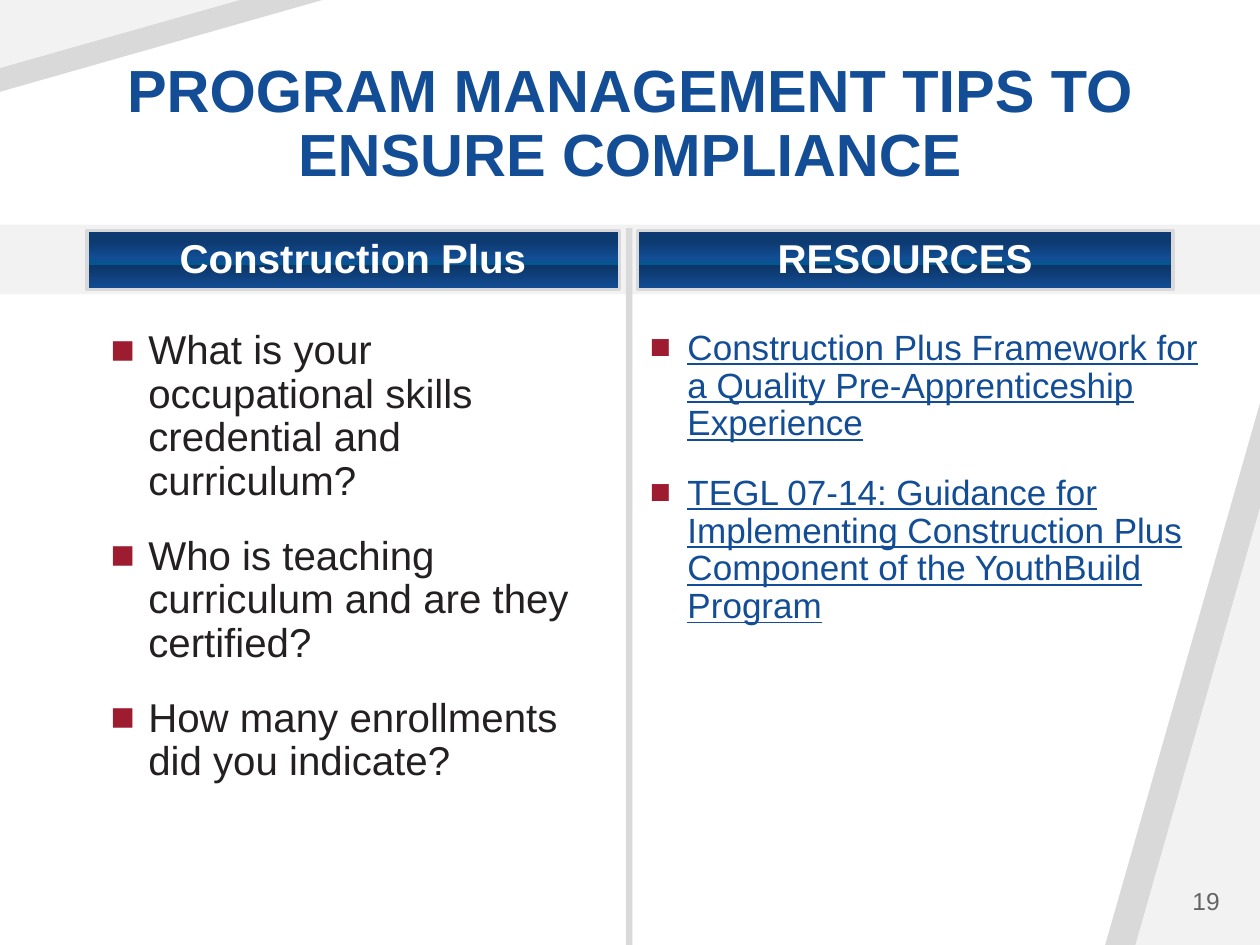
import dataclasses

import lxml.etree
import pptx
import pptx.dml.color
import pptx.enum.shapes
import pptx.enum.text
import pptx.oxml.ns
import pptx.util

Cm = pptx.util.Cm
Align = pptx.enum.text.PP_ALIGN
Anchor = pptx.enum.text.MSO_ANCHOR
Shape = pptx.enum.shapes.MSO_SHAPE
qn = pptx.oxml.ns.qn


@dataclasses.dataclass(frozen=True)
class Theme:
    font: str = "Arial"
    blue: str = "124D95"
    text: str = "242021"
    white: str = "FFFFFF"
    bullet: str = "9E1C30"
    gray: str = "D9D9D9"
    pale: str = "F2F2F2"
    number: str = "646464"
    title_size: int = 34
    body_size: int = 23
    link_size: int = 20
    number_size: int = 14
    header_stops: tuple = ((19, "0D3A70"), (47, "124D95"), (58, "00588F"),
                           (59, "0D3668"), (100, "124D95"))


THEME = Theme()
WIDTH, HEIGHT = 25.4, 19.05


def rgb(value):
    return pptx.dml.color.RGBColor.from_string(value)


def add_block(slide, kind, left, top, width, height, color):
    shape = slide.shapes.add_shape(kind, Cm(left), Cm(top), Cm(width), Cm(height))
    shape.shadow.inherit = False
    shape.fill.solid()
    shape.fill.fore_color.rgb = rgb(color)
    shape.line.fill.background()
    return shape


def add_triangle(slide, left, top, width, height, color, rotation=0):
    triangle = add_block(slide, Shape.ISOSCELES_TRIANGLE, left, top, width, height, color)
    triangle.adjustments[0] = 1
    triangle.rotation = rotation


def set_bullet(paragraph):
    properties = paragraph._p.get_or_add_pPr()
    properties.set("marL", str(Cm(0.76)))
    properties.set("indent", str(-Cm(0.76)))
    color = lxml.etree.SubElement(properties, qn("a:buClr"))
    lxml.etree.SubElement(color, qn("a:srgbClr"), val=THEME.bullet)
    lxml.etree.SubElement(properties, qn("a:buFont"), typeface=THEME.font)
    lxml.etree.SubElement(properties, qn("a:buChar"), char="■")


def write_text(shape, lines, *, size, color, bold=False, underline=False, bullets=False,
               align=Align.LEFT, anchor=Anchor.TOP, spacing=0.9, gap=18):
    frame = shape.text_frame
    frame.word_wrap = True
    frame.auto_size = pptx.enum.text.MSO_AUTO_SIZE.NONE
    frame.vertical_anchor = anchor
    for index, line in enumerate(lines):
        paragraph = frame.paragraphs[0] if index == 0 else frame.add_paragraph()
        if bullets:
            set_bullet(paragraph)
        paragraph.alignment = align
        paragraph.line_spacing = spacing
        paragraph.space_before = pptx.util.Pt(gap if index else 0)
        run = paragraph.add_run()
        run.text = line
        run.font.name = THEME.font
        run.font.size = pptx.util.Pt(size)
        run.font.bold = bold
        run.font.underline = underline
        run.font.color.rgb = rgb(color)


def add_text(slide, left, top, width, height, lines, **text_format):
    box = slide.shapes.add_textbox(Cm(left), Cm(top), Cm(width), Cm(height))
    write_text(box, lines, **text_format)


def set_header_gradient(shape):
    shape.fill.gradient()
    shape.fill.gradient_angle = 270  # counter-clockwise: runs from top to bottom
    stop_list = shape._element.spPr.find(".//" + qn("a:gsLst"))
    for stop in list(stop_list):
        stop_list.remove(stop)
    for position, color in THEME.header_stops:
        stop = lxml.etree.SubElement(stop_list, qn("a:gs"), pos=str(position * 1000))
        lxml.etree.SubElement(stop, qn("a:srgbClr"), val=color)


def add_header(slide, left, width, text):
    header = add_block(slide, Shape.RECTANGLE, left, 4.65, width, 1.19, THEME.blue)
    set_header_gradient(header)
    header.line.color.rgb = rgb(THEME.gray)
    header.line.width = pptx.util.Pt(2)
    frame = header.text_frame
    frame.margin_left = frame.margin_right = Cm(0.13)
    frame.margin_top = frame.margin_bottom = Cm(0.15)
    write_text(header, [text], size=THEME.body_size, color=THEME.white, bold=True,
               align=Align.CENTER, anchor=Anchor.MIDDLE)


def add_background(slide):
    # Lower right and upper left corners, gray behind pale
    for width, height, color in ((3.12, 10.92, THEME.gray), (2.51, 8.81, THEME.pale)):
        add_triangle(slide, WIDTH - width, HEIGHT - height, width, height, color)
    for width, height, color in ((6.5, 1.85, THEME.gray), (4.83, 1.37, THEME.pale)):
        add_triangle(slide, 0, 0, width, height, color, rotation=180)
    # Header band and column divider
    add_block(slide, Shape.RECTANGLE, 0, 4.53, WIDTH, 1.4, THEME.pale)
    add_block(slide, Shape.RECTANGLE, 12.62, 4.6, 0.13, HEIGHT - 4.6, THEME.gray)


def set_title(slide, text):
    title = slide.shapes.title
    title.left, title.top, title.width, title.height = Cm(1.75), Cm(1.02), Cm(21.9), Cm(2.92)
    write_text(title, [text], size=THEME.title_size, color=THEME.blue, bold=True,
               align=Align.CENTER, anchor=Anchor.BOTTOM)


def main():
    presentation = pptx.Presentation()
    presentation.slide_width, presentation.slide_height = Cm(WIDTH), Cm(HEIGHT)
    slide = presentation.slides.add_slide(presentation.slide_layouts[5])

    add_background(slide)
    set_title(slide, "PROGRAM MANAGEMENT TIPS TO ENSURE COMPLIANCE")

    # Left column: questions
    add_header(slide, 1.75, 10.74, "Construction Plus")
    add_text(slide, 1.98, 6.53, 10.41, 10.67, [
        "What is your occupational skills credential and curriculum?",
        "Who is teaching curriculum and are they certified?",
        "How many enrollments did you indicate?",
    ], size=THEME.body_size, color=THEME.text, bullets=True)

    # Right column: resources
    add_header(slide, 12.85, 10.8, "RESOURCES")
    add_text(slide, 12.85, 6.53, 11.86, 10.67, [
        "Construction Plus Framework for a Quality Pre-Apprenticeship Experience",
        "TEGL 07-14: Guidance for Implementing Construction Plus Component of the "
        "YouthBuild Program",
    ], size=THEME.link_size, color=THEME.blue, underline=True, bullets=True)

    # Slide number
    add_text(slide, 22.76, 17.65, 2.08, 1.02, ["19"], size=THEME.number_size,
             color=THEME.number, align=Align.RIGHT, anchor=Anchor.MIDDLE, spacing=1.0)

    presentation.save("out.pptx")


if __name__ == "__main__":
    main()
